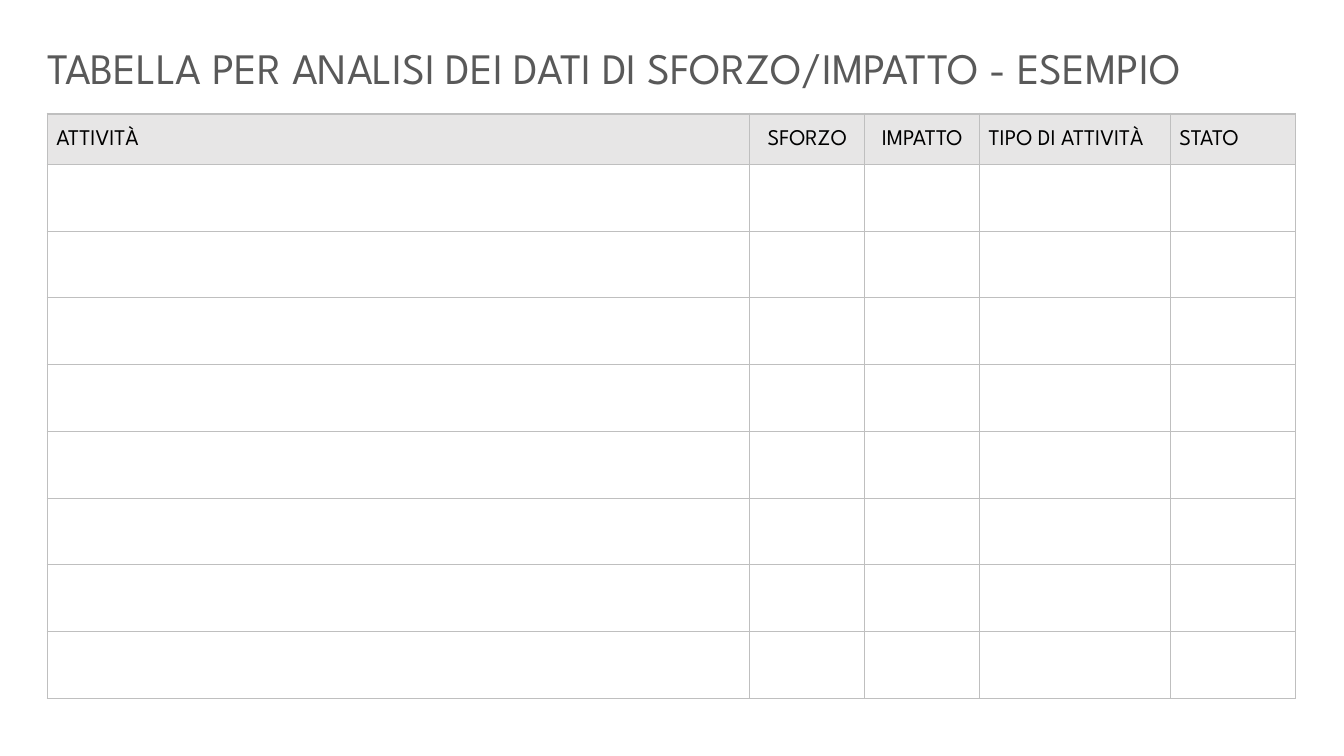
from pptx import Presentation
from pptx import util as u
from pptx.dml.color import RGBColor
from pptx.enum import text
from pptx.oxml.ns import qn
from lxml import etree

Pt = u.Pt
FONT = "League Spartan"
COLORS = {"title": "595959", "head": "000000", "band": "E7E6E6",
          "body": "FFFFFF", "rule": "BFBFBF"}
# label, column width, centred
COLUMNS = [("ATTIVITÀ", 501.8, False), ("SFORZO", 82.1, True),
           ("IMPATTO", 82.1, True), ("TIPO DI ATTIVITÀ", 136.1, False),
           ("STATO", 89.3, False)]
ROWS = 8
HEAD_H, ROW_H = 36, 47.7


def color(name):
    return RGBColor.from_string(COLORS[name])


def add_run(para, words, size, tint):
    run = para.add_run()
    run.text = words
    run.font.name = FONT
    run.font.size = Pt(size)
    run.font.bold = False
    run.font.color.rgb = color(tint)


def add_title(slide, words):
    box = slide.shapes.add_textbox(Pt(26.6), Pt(25.9), Pt(918.7), Pt(44.6))
    frame = box.text_frame
    frame.word_wrap = True
    frame.auto_size = text.MSO_AUTO_SIZE.SHAPE_TO_FIT_TEXT
    add_run(frame.paragraphs[0], words, 31, "title")


def style_cell(cell, fill, top):
    """Draw the four borders, the top one of the given width, then fill."""
    props = cell._tc.get_or_add_tcPr()
    for side, width in (("L", 1), ("R", 1), ("T", top), ("B", 1)):
        line = etree.SubElement(props, qn("a:ln" + side), w=str(int(Pt(width))))
        solid = etree.SubElement(line, qn("a:solidFill"))
        etree.SubElement(solid, qn("a:srgbClr"), val=COLORS["rule"])
    cell.fill.solid()
    cell.fill.fore_color.rgb = color(fill)


def fill_head(cell, label, centred):
    cell.vertical_anchor = text.MSO_ANCHOR.MIDDLE
    cell.margin_left = Pt(0.7 if centred else 6.5)
    cell.margin_right = cell.margin_top = Pt(0.7)
    cell.margin_bottom = 0
    para = cell.text_frame.paragraphs[0]
    if centred:
        para.alignment = text.PP_ALIGN.CENTER
    add_run(para, label, 16, "head")


def add_grid(slide):
    width = sum(col[1] for col in COLUMNS)
    table = slide.shapes.add_table(
        ROWS + 1, len(COLUMNS), Pt(33.8), Pt(81.4),
        Pt(width), Pt(HEAD_H + ROWS * ROW_H)).table
    table.horz_banding = False
    for num, row in enumerate(table.rows):
        row.height = Pt(ROW_H if num else HEAD_H)
        for cell in row.cells:
            style_cell(cell, "body" if num else "band", 1 if num else 2.25)
    for num, (label, wide, centred) in enumerate(COLUMNS):
        table.columns[num].width = Pt(wide)
        fill_head(table.cell(0, num), label, centred)


def main():
    deck = Presentation()
    deck.slide_width, deck.slide_height = Pt(960), Pt(540)
    slide = deck.slides.add_slide(deck.slide_layouts[6])
    add_grid(slide)
    add_title(slide, "TABELLA PER ANALISI DEI DATI DI SFORZO/IMPATTO - ESEMPIO")
    deck.save("out.pptx")


if __name__ == "__main__":
    main()
